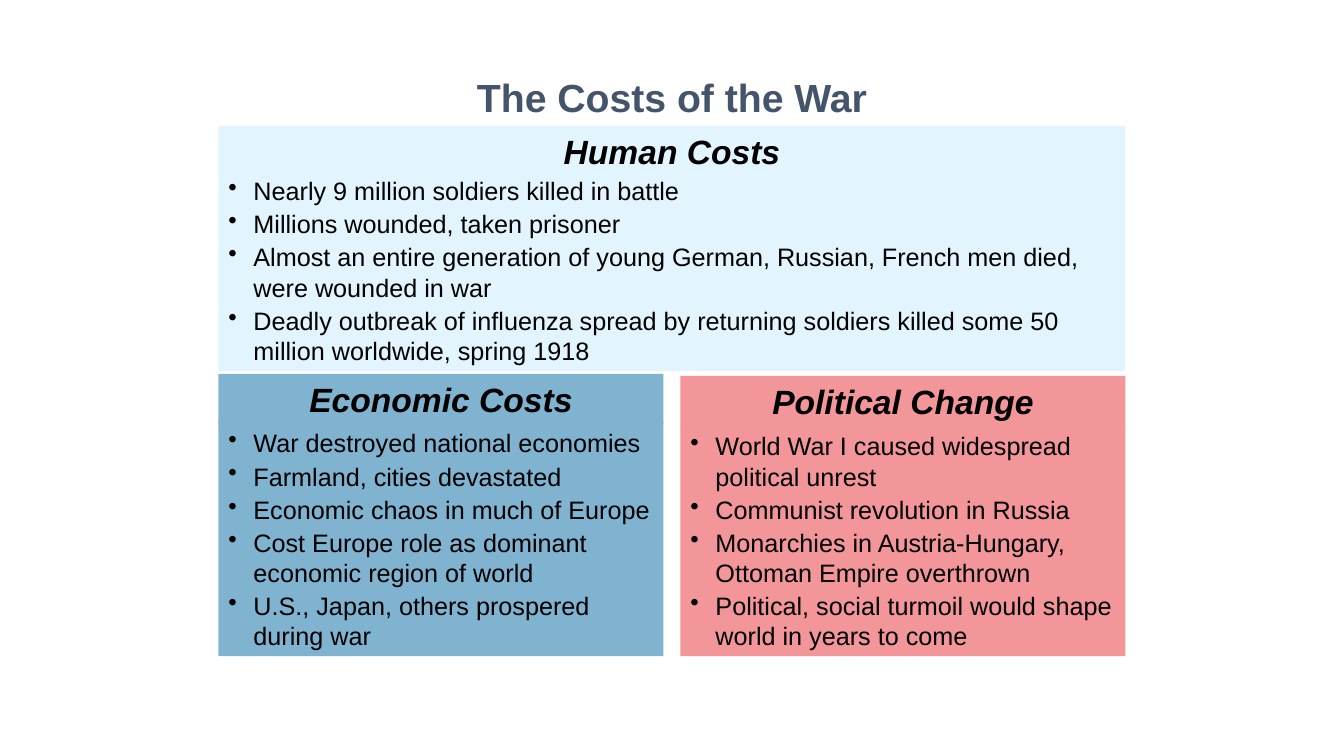
"""Build the slide on the human, economic and political costs of the war."""
from lxml.etree import SubElement
from pptx import Presentation
from pptx.dml.color import RGBColor
from pptx.enum.shapes import MSO_SHAPE
from pptx.enum.text import MSO_ANCHOR, PP_ALIGN
from pptx.oxml.ns import qn
from pptx.util import Pt

SLATE = RGBColor(0x44, 0x54, 0x6A)
BLACK = RGBColor(0x00, 0x00, 0x00)
PALE_BLUE = RGBColor(0xE2, 0xF4, 0xFE)
BLUE = RGBColor(0x80, 0xB3, 0xD0)
PINK = RGBColor(0xF2, 0x96, 0x99)

TITLE = "The Costs of the War"
HUMAN = ("Human Costs", [
    "Nearly 9 million soldiers killed in battle",
    "Millions wounded, taken prisoner",
    "Almost an entire generation of young German, Russian, French men died, were wounded in war",
    "Deadly outbreak of influenza spread by returning soldiers killed some 50 million worldwide, spring 1918",
])
ECONOMIC = ("Economic Costs", [
    "War destroyed national economies",
    "Farmland, cities devastated",
    "Economic chaos in much of Europe",
    "Cost Europe role as dominant economic region of world",
    "U.S., Japan, others prospered during war",
])
POLITICAL = ("Political Change", [
    "World War I caused widespread political unrest",
    "Communist revolution in Russia",
    "Monarchies in Austria-Hungary, Ottoman Empire overthrown",
    "Political, social turmoil would shape world in years to come",
])

TITLE_FORMAT = {"name": "Arial", "size": Pt(28), "bold": True, "italic": False}
HEADING_FORMAT = {"name": "Arial", "size": Pt(24), "bold": True, "italic": True}
BULLET_FORMAT = {"name": "Arial", "size": Pt(18), "bold": False, "italic": False}

SLIDE_WIDTH, SLIDE_HEIGHT = 960, 540
LEFT, FULL_WIDTH, COLUMN_WIDTH = 156, 648, 318
RIGHT_COLUMN = LEFT + FULL_WIDTH - COLUMN_WIDTH
BOTTOM = 468.75
HEADING_HEIGHT = 36
INDENT = 18
SPACE_RATIO = 0.115

# (content, left, heading top, list top, colour)
COLUMNS = [
    (ECONOMIC, LEFT, 267.12, 301.75, BLUE),
    (POLITICAL, RIGHT_COLUMN, 268.5, 303.75, PINK),
]


def write_paragraph(paragraph, text, values, color, alignment):
    """Put one formatted run in a paragraph."""
    run = paragraph.add_run()
    run.text = text
    for name, value in values.items():
        setattr(run.font, name, value)
    run.font.color.rgb = color
    paragraph.alignment = alignment


def add_bullet(paragraph):
    """Give a paragraph a hanging bullet."""
    properties = paragraph._p.get_or_add_pPr()
    properties.set("marL", str(Pt(INDENT)))
    properties.set("indent", str(-Pt(INDENT)))
    SubElement(properties, qn("a:buChar")).set("char", "•")


def add_box(shapes, position, color, heading, bullets):
    """Add a filled box holding an optional heading and a list."""
    shape = shapes.add_shape(MSO_SHAPE.RECTANGLE, *map(Pt, position))
    shape.shadow.inherit = False
    shape.fill.solid()
    shape.fill.fore_color.rgb = color
    shape.line.fill.background()
    frame = shape.text_frame
    frame.word_wrap = True
    frame.vertical_anchor = MSO_ANCHOR.MIDDLE
    lines = [(heading, HEADING_FORMAT)] if heading else []
    lines += [(bullet, BULLET_FORMAT) for bullet in bullets]
    for index, (text, values) in enumerate(lines):
        paragraph = frame.add_paragraph() if index else frame.paragraphs[0]
        is_heading = values is HEADING_FORMAT
        alignment = PP_ALIGN.CENTER if is_heading else PP_ALIGN.LEFT
        write_paragraph(paragraph, text, values, BLACK, alignment)
        paragraph.space_after = Pt(values["size"].pt * SPACE_RATIO)
        if not is_heading:
            add_bullet(paragraph)


def main():
    """Create and save the presentation."""
    presentation = Presentation()
    presentation.slide_width = Pt(SLIDE_WIDTH)
    presentation.slide_height = Pt(SLIDE_HEIGHT)
    slide = presentation.slides.add_slide(presentation.slide_layouts[5])

    title = slide.shapes.title
    title.left, title.top, title.width, title.height = map(Pt, (168, 48, 624, 42))
    title.text_frame.vertical_anchor = MSO_ANCHOR.MIDDLE
    write_paragraph(title.text_frame.paragraphs[0], TITLE, TITLE_FORMAT, SLATE, PP_ALIGN.CENTER)

    add_box(slide.shapes, (LEFT, 90, FULL_WIDTH, 175), PALE_BLUE, *HUMAN)
    for (heading, bullets), left, heading_top, list_top, color in COLUMNS:
        shapes = slide.shapes.add_group_shape().shapes
        list_position = (left, list_top, COLUMN_WIDTH, BOTTOM - list_top)
        heading_position = (left, heading_top, COLUMN_WIDTH, HEADING_HEIGHT)
        add_box(shapes, list_position, color, None, bullets)
        add_box(shapes, heading_position, color, heading, [])

    presentation.save("out.pptx")


if __name__ == "__main__":
    main()
